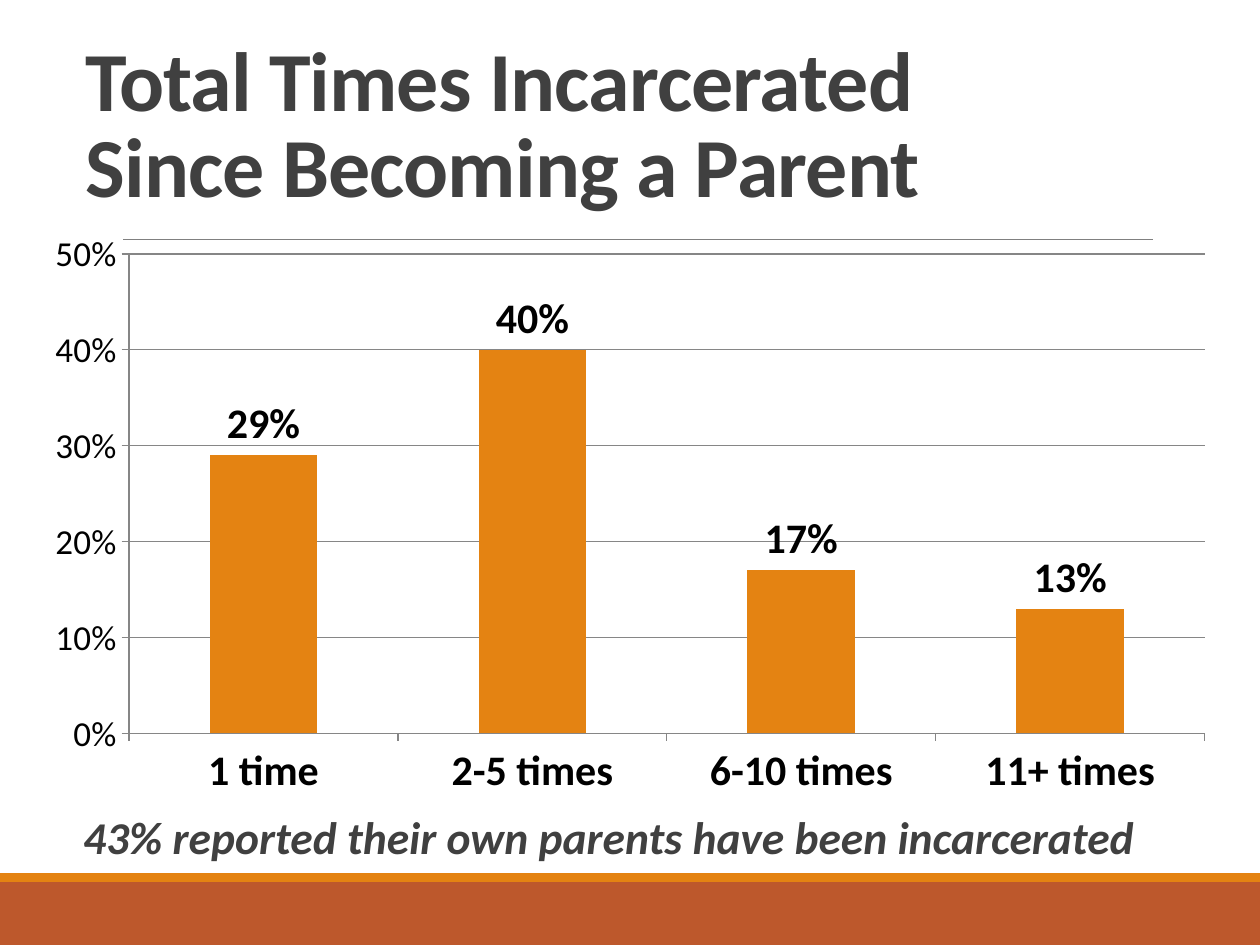
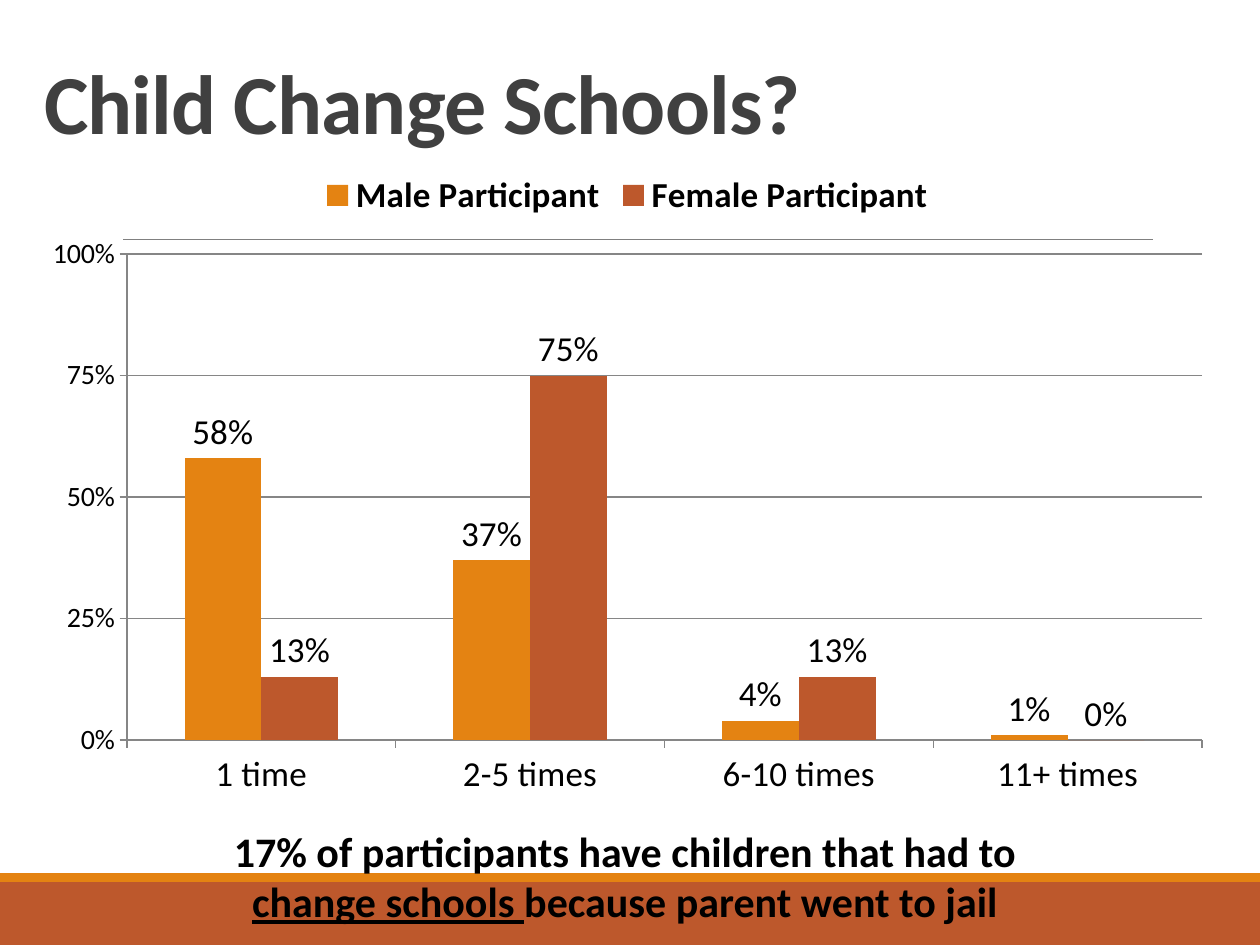
from lxml import etree
from pptx import Presentation
from pptx.chart.data import CategoryChartData
from pptx.dml.color import RGBColor
from pptx.enum.chart import XL_CHART_TYPE, XL_LABEL_POSITION, XL_LEGEND_POSITION, XL_TICK_MARK
from pptx.enum.shapes import MSO_CONNECTOR, MSO_SHAPE
from pptx.enum.text import MSO_ANCHOR, MSO_AUTO_SIZE, PP_ALIGN
from pptx.oxml.ns import qn
from pptx.util import Inches, Pt

COLUMN_CHART = XL_CHART_TYPE.COLUMN_CLUSTERED
OUTSIDE_END = XL_LABEL_POSITION.OUTSIDE_END
LEGEND_TOP = XL_LEGEND_POSITION.TOP
TICK_OUT = XL_TICK_MARK.OUTSIDE
STRAIGHT = MSO_CONNECTOR.STRAIGHT
RECTANGLE = MSO_SHAPE.RECTANGLE
BOTTOM, TOP = MSO_ANCHOR.BOTTOM, MSO_ANCHOR.TOP
NO_FIT = MSO_AUTO_SIZE.NONE
LEFT, CENTER = PP_ALIGN.LEFT, PP_ALIGN.CENTER

FONT = "Calibri"
ORANGE, RUST = "E48312", "BD582C"
DARK, GREY, RULE, BLACK = "404040", "868686", "808080", "000000"
TITLE_CONTENT, TITLE_ONLY = 1, 5
WIDTH, HEIGHT = Inches(10), Inches(7.5)
COLS, ROWS = 100, 75
TIMES = ["1 time", "2-5 times", "6-10 times", "11+ times"]


def rgb(hex_color):
    return RGBColor.from_string(hex_color)


def grid(x, y, w, h):
    """Turn columns and rows of the slide grid into a box of lengths."""
    return (round(x * WIDTH / COLS), round(y * HEIGHT / ROWS),
            round(w * WIDTH / COLS), round(h * HEIGHT / ROWS))


def place(shape, box):
    shape.left, shape.top, shape.width, shape.height = box


def style(font, size, color=BLACK, bold=False):
    font.name, font.size, font.bold = FONT, Pt(size), bold
    font.color.rgb = rgb(color)


def add_run(p, text, size, color=BLACK):
    r = p.add_run()
    r.text = text
    style(r.font, size, color, bold=True)
    return r


def add_bands(s):
    for color, y, h in ((RUST, 70, 5), (ORANGE, 69.3, 0.7)):
        band = s.shapes.add_shape(RECTANGLE, *grid(0, y, COLS, h))
        band.shadow.inherit = False
        band.fill.solid()
        band.fill.fore_color.rgb = rgb(color)
        band.line.fill.background()


def add_rule(s):
    x, y, w, _ = grid(9.8, 19, 81.7, 0)
    rule = s.shapes.add_connector(STRAIGHT, x, y, x + w, y)
    rule.line.color.rgb = rgb(RULE)
    rule.line.width = Pt(0.5)
    etree.SubElement(rule._element.spPr, qn("a:effectLst"))


def add_title(s, box, lines):
    title = s.shapes.title
    place(title, box)
    tf = title.text_frame
    tf.auto_size, tf.vertical_anchor = NO_FIT, BOTTOM
    p = tf.paragraphs[0]
    p.alignment, p.line_spacing = LEFT, 0.85
    for i, line in enumerate(lines):
        if i:
            p.add_line_break()
        r = add_run(p, line, 48, DARK)
        r.font._element.set("spc", "-50")


def new_slide(prs, layout, title_box, title_lines):
    s = prs.slides.add_slide(prs.slide_layouts[layout])
    add_bands(s)
    add_rule(s)
    add_title(s, title_box, title_lines)
    return s


def style_value_axis(axis, size, top, step):
    axis.minimum_scale, axis.maximum_scale, axis.major_unit = 0, top, step
    axis.has_major_gridlines = True
    axis.major_gridlines.format.line.color.rgb = rgb(GREY)
    axis.tick_labels.number_format = "0%"
    axis.tick_labels.number_format_is_linked = False
    style(axis.tick_labels.font, size)


def style_series(series, color, size, bold):
    series.format.fill.solid()
    series.format.fill.fore_color.rgb = rgb(color)
    series.invert_if_negative = False
    labels = series.data_labels
    labels.show_value, labels.position = True, OUTSIDE_END
    labels.number_format, labels.number_format_is_linked = "0%", False
    style(labels.font, size, bold=bold)


def add_column_chart(s, box, series, size, value_size, top, step, bold=False):
    data = CategoryChartData(number_format="0%")
    data.categories = TIMES
    for name, values in series:
        data.add_series(name, values)
    chart = s.shapes.add_chart(COLUMN_CHART, *box, data).chart
    style(chart.font, 10)
    chart.has_title = False
    chart.has_legend = len(series) > 1
    if chart.has_legend:
        chart.legend.position = LEGEND_TOP
        chart.legend.include_in_layout = False
        style(chart.legend.font, 20, bold=True)
    for axis in (chart.category_axis, chart.value_axis):
        axis.major_tick_mark = TICK_OUT
        axis.format.line.color.rgb = rgb(GREY)
    style(chart.category_axis.tick_labels.font, size, bold=bold)
    style_value_axis(chart.value_axis, value_size, top, step)
    plot = chart.plots[0]
    plot.gap_width, plot.vary_by_categories = 150, False
    for one, color in zip(plot.series, (ORANGE, RUST)):
        style_series(one, color, size, bold)


def add_blank_bullet(p):
    pPr = p._p.get_or_add_pPr()
    pPr.set("marL", str(Inches(0.1)))
    pPr.set("indent", str(-Inches(0.1)))
    color = etree.SubElement(pPr, qn("a:buClr"))
    etree.SubElement(color, qn("a:srgbClr")).set("val", ORANGE)
    etree.SubElement(pPr, qn("a:buChar")).set("char", " ")


def add_body_note(s, box, text):
    body = s.placeholders[1]
    place(body, box)
    tf = body.text_frame
    tf.auto_size, tf.vertical_anchor = NO_FIT, TOP
    tf.margin_left = tf.margin_right = 0
    p = tf.paragraphs[0]
    add_blank_bullet(p)
    p.line_spacing, p.space_before, p.space_after = 0.9, Pt(0), Pt(2)
    add_run(p, text, 26, DARK).font.italic = True


def add_centered_note(s, box, lines):
    """Each line is a list of (text, underlined) runs."""
    tf = s.shapes.add_textbox(*box).text_frame
    tf.word_wrap = True
    for i, runs in enumerate(lines):
        p = tf.add_paragraph() if i else tf.paragraphs[0]
        p.alignment = CENTER
        for text, underlined in runs:
            add_run(p, text, 24).font.underline = underlined


def build_incarceration_slide(prs):
    s = new_slide(prs, TITLE_CONTENT, grid(5.8, 5, 90, 12.5),
                  ["Total Times Incarcerated ", "Since Becoming a Parent"])
    add_body_note(s, grid(5.6, 64.2, 93.3, 5.8),
                  "43% reported their own parents have been incarcerated")
    add_column_chart(s, grid(2.5, 17.5, 95, 46.7),
                     [("Series 1", (0.29, 0.4, 0.17, 0.13))],
                     size=24, value_size=20, top=0.5, step=0.1, bold=True)


def build_schools_slide(prs):
    s = new_slide(prs, TITLE_ONLY, grid(2.5, 0, 95, 12.5), ["Child Change Schools?"])
    add_centered_note(s, grid(-0.4, 65, 100, 9.1), [
        [("17% of participants have children that had to", False)],
        [("change schools ", True), ("because parent went to jail", False)]])
    add_column_chart(s, grid(2.3, 12.5, 95, 51.7),
                     [("Male Participant", (0.58, 0.37, 0.04, 0.01)),
                      ("Female Participant", (0.13, 0.75, 0.13, 0))],
                     size=20, value_size=16, top=1, step=0.25)


def main():
    prs = Presentation()
    prs.slide_width, prs.slide_height = WIDTH, HEIGHT
    build_incarceration_slide(prs)
    build_schools_slide(prs)
    prs.save("out.pptx")


if __name__ == "__main__":
    main()
